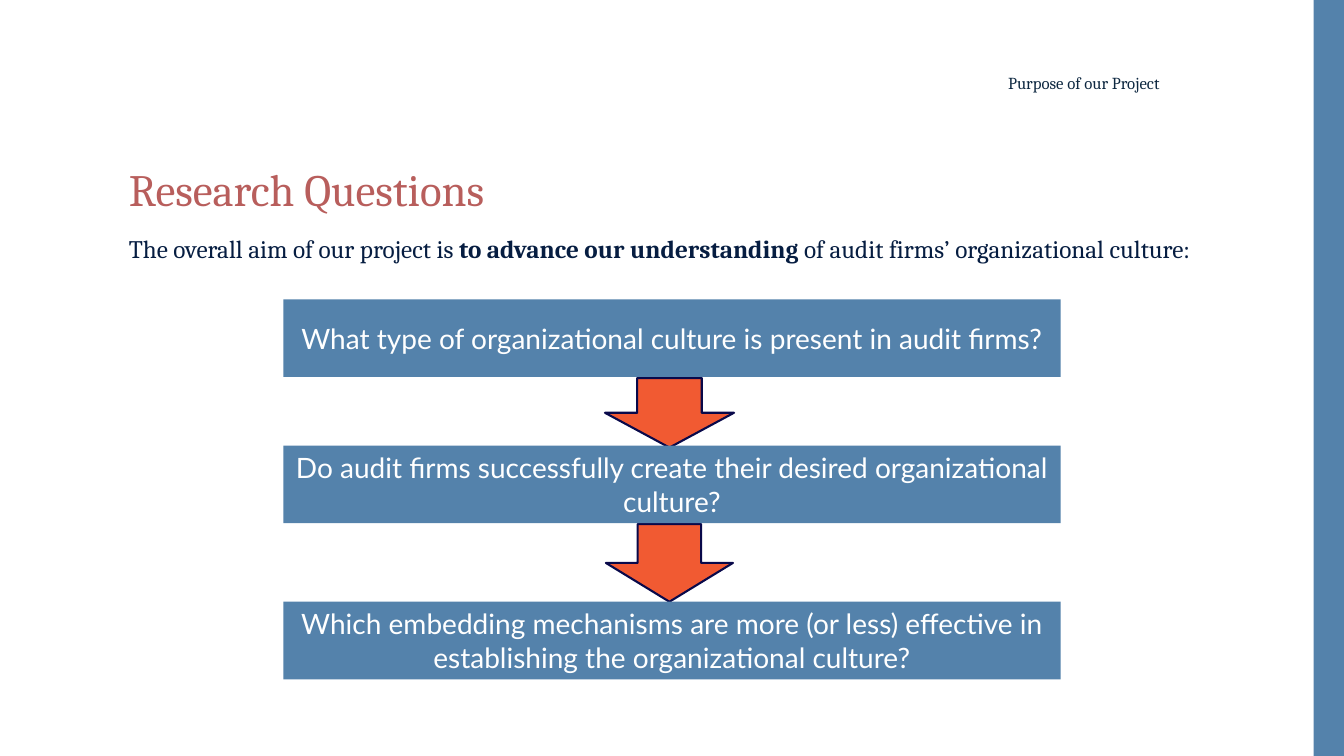
from dataclasses import dataclass

from pptx import Presentation
from pptx.dml.color import RGBColor as Rgb
from pptx.enum.shapes import MSO_SHAPE as Kind
from pptx.enum.text import MSO_ANCHOR as Anchor, PP_ALIGN as Align
from pptx.util import Inches, Pt

HUES = {
    "blue": "5482AB",
    "orange": "F15A32",
    "edge": "09094A",
    "title": "B85E5C",
    "body": "061D41",
    "head": "0E2841",
    "white": "FFFFFF",
}


@dataclass
class Box:
    left: float
    top: float
    width: float
    height: float

    def place(self) -> tuple:
        return tuple(map(Inches, (self.left, self.top, self.width, self.height)))


@dataclass
class Step:
    top: float
    text: str


STEPS = [
    Step(2.97, "What type of organizational culture is present in audit firms?"),
    Step(4.42, "Do audit firms successfully create their desired organizational culture?"),
    Step(5.97, "Which embedding mechanisms are more (or less) effective in "
               "establishing the organizational culture?"),
]
ARROWS = [Box(6, 3.75, 1.28, 0.69), Box(6.01, 5.2, 1.26, 0.77)]


def hue(name: str) -> Rgb:
    return Rgb.from_string(HUES[name])


def write(shape, *runs: str, size: float, color: str, font: str = "Cambria",
          align=Align.LEFT, anchor=Anchor.TOP, space: float = 1.0,
          bold: str = "") -> None:
    frame = shape.text_frame
    frame.word_wrap = True
    frame.vertical_anchor = anchor
    para = frame.paragraphs[0]
    para.alignment = align
    para.line_spacing = space
    for text in runs:
        run = para.add_run()
        run.text = text
        run.font.size = Pt(size)
        run.font.name = font
        run.font.bold = text == bold
        run.font.color.rgb = hue(color)


def draw(slide, kind, box: Box, fill: str, line: str = ""):
    shape = slide.shapes.add_shape(kind, *box.place())
    shape.shadow.inherit = False
    shape.fill.solid()
    shape.fill.fore_color.rgb = hue(fill)
    if line:
        shape.line.color.rgb = hue(line)
        shape.line.width = Pt(1.5)
    else:
        shape.line.fill.background()
    return shape


def label(slide, box: Box):
    return slide.shapes.add_textbox(*box.place())


def main() -> None:
    deck = Presentation()
    deck.slide_width, deck.slide_height = Inches(13.33), Inches(7.5)
    slide = deck.slides.add_slide(deck.slide_layouts[6])

    draw(slide, Kind.RECTANGLE, Box(13.03, 0, 0.3, 7.5), "blue")
    for box in ARROWS:
        draw(slide, Kind.DOWN_ARROW, box, "orange", "edge")

    write(label(slide, Box(1.18, 1.62, 11.18, 1.02)), "Research Questions",
          size=32, color="title", space=0.9)
    aim = "to advance our understanding "
    write(label(slide, Box(1.18, 2.18, 11.07, 4.94)),
          "The overall aim of our project is ", aim,
          "of audit firms’ organizational culture:",
          size=18, color="body", space=1.3, bold=aim)
    write(label(slide, Box(4.93, 0.62, 6.67, 0.4)), "Purpose of our Project",
          size=12, color="head", align=Align.RIGHT, anchor=Anchor.MIDDLE)

    for step in STEPS:
        bar = draw(slide, Kind.RECTANGLE, Box(2.81, step.top, 7.71, 0.77), "blue")
        write(bar, step.text, size=20, color="white", font="Lato",
              align=Align.CENTER, anchor=Anchor.MIDDLE)

    deck.save("out.pptx")


if __name__ == "__main__":
    main()
